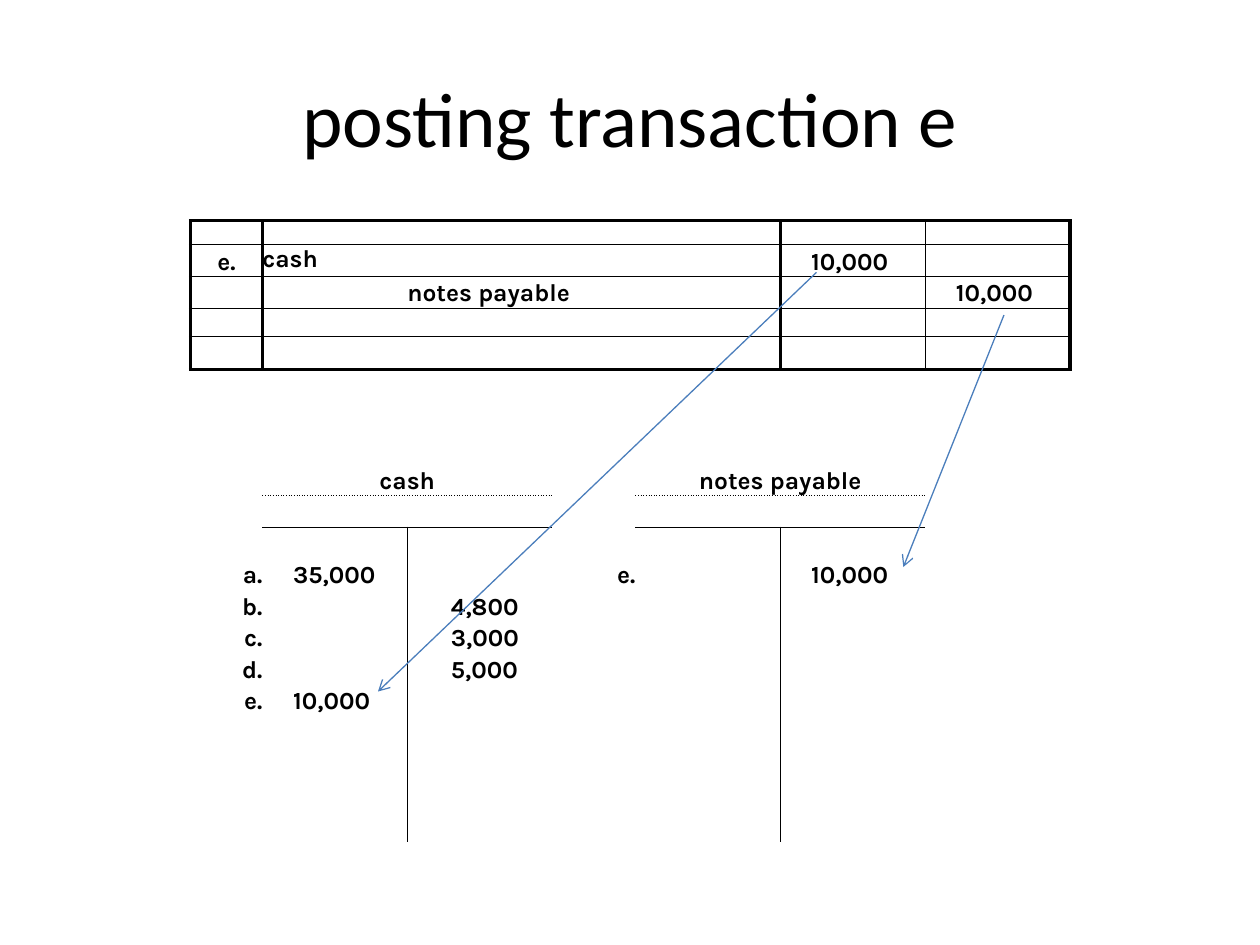
from lxml import etree
from pptx import Presentation
from pptx.dml.color import RGBColor
from pptx.enum.shapes import MSO_CONNECTOR
from pptx.enum.text import MSO_ANCHOR, PP_ALIGN
from pptx.oxml.ns import qn
from pptx.util import Cm, Pt

STRAIGHT = MSO_CONNECTOR.STRAIGHT
TOP, MIDDLE, BOTTOM = MSO_ANCHOR.TOP, MSO_ANCHOR.MIDDLE, MSO_ANCHOR.BOTTOM
LEFT, CENTER, RIGHT = PP_ALIGN.LEFT, PP_ALIGN.CENTER, PP_ALIGN.RIGHT
COLORS = {"ink": "000000", "arrow": "4B7EBC"}

THICK, THIN, DOTTED = (2, "solid"), (0.5, "solid"), (0.5, "dot")
JOURNAL_ROWS = 5
ACCOUNT_TITLE_ROW = 8
ACCOUNT_COLUMNS = (1, 2, 4, 5)
COLUMN_WIDTHS = [1.45, 2.92, 2.92, 1.68, 2.92, 2.92, 2.92]
ROW_HEIGHTS = [0.48, 0.64, 0.64, 0.58, 0.66] + [0.635] * 15
MERGES = [(2, 2, 3), (ACCOUNT_TITLE_ROW, 1, 2), (ACCOUNT_TITLE_ROW, 4, 5)]
AMOUNT_INDENT, SMALL_AMOUNT_INDENT = 0.62, 0.88

# (row, column): text, alignment, anchor, left indent in cm
ENTRIES = {
    (1, 0): ("e.", CENTER, BOTTOM, 0),
    (1, 1): ("cash", LEFT, TOP, 0),
    (1, 5): ("10,000", LEFT, BOTTOM, AMOUNT_INDENT),
    (2, 2): ("notes payable", LEFT, BOTTOM, 0),
    (2, 6): ("10,000", LEFT, BOTTOM, AMOUNT_INDENT),
    (8, 1): ("cash", CENTER, BOTTOM, 0),
    (8, 4): ("notes payable", CENTER, BOTTOM, 0),
    (11, 1): ("35,000", LEFT, BOTTOM, AMOUNT_INDENT),
    (11, 3): ("e.", RIGHT, BOTTOM, 0),
    (11, 5): ("10,000", LEFT, BOTTOM, AMOUNT_INDENT),
    (15, 1): ("10,000", LEFT, BOTTOM, AMOUNT_INDENT),
}
for row, letter in enumerate("abcde", start=11):
    ENTRIES[row, 0] = (f"{letter}.", RIGHT, BOTTOM, 0)
for row, amount in enumerate(["4,800", "3,000", "5,000"], start=12):
    ENTRIES[row, 2] = (amount, LEFT, BOTTOM, SMALL_AMOUNT_INDENT)


def horizontal_rule(line, column):
    """Return the border on the given row line, or None."""
    if line in (0, JOURNAL_ROWS):
        return THICK
    if line < JOURNAL_ROWS:
        return THIN
    if column in ACCOUNT_COLUMNS:
        return {9: DOTTED, 10: THIN}.get(line)
    return None


def vertical_rule(line, row):
    """Return the border on the given column line, or None."""
    if row < JOURNAL_ROWS:
        return {0: THICK, 1: THICK, 5: THICK, 6: THIN, 7: THICK}.get(line)
    if row >= 10 and line in (2, 5):
        return THIN
    return None


class SlideBuilder:
    title_font, table_font = "Calibri", "Karla"
    title_size, table_size, empty_size = 44, 14, 9

    def __init__(self, slide):
        self.slide = slide

    def add_run(self, paragraph, text, font, size, bold=False):
        run = paragraph.add_run()
        run.text = text
        run.font.name = font
        run.font.size = Pt(size)
        run.font.bold = bold
        run.font.color.rgb = RGBColor.from_string(COLORS["ink"])

    def title(self, text, left, top, width, height):
        frame = self.slide.shapes.add_textbox(
            Cm(left), Cm(top), Cm(width), Cm(height)).text_frame
        frame.word_wrap = True
        frame.vertical_anchor = MIDDLE
        paragraph = frame.paragraphs[0]
        paragraph.alignment = CENTER
        self.add_run(paragraph, text, self.title_font, self.title_size)

    def border(self, cell, side, rule):
        properties = cell._tc.get_or_add_tcPr()
        line = etree.SubElement(properties, qn(f"a:ln{side}"))
        if rule is None:
            line.set("w", "0")
            etree.SubElement(line, qn("a:noFill"))
            return
        width, dash = rule
        line.set("w", str(Pt(width)))
        fill = etree.SubElement(line, qn("a:solidFill"))
        etree.SubElement(fill, qn("a:srgbClr"), val=COLORS["ink"])
        etree.SubElement(line, qn("a:prstDash"), val=dash)

    def fill_cell(self, cell, entry):
        cell.margin_left = cell.margin_right = 0
        cell.margin_top = cell.margin_bottom = 0
        paragraph = cell.text_frame.paragraphs[0]
        if entry is None:
            # A small end mark keeps an empty row from growing
            etree.SubElement(paragraph._p, qn("a:endParaRPr"),
                             sz=str(self.empty_size * 100))
            return
        text, alignment, anchor, indent = entry
        cell.margin_left = Cm(indent)
        cell.vertical_anchor = anchor
        paragraph.alignment = alignment
        self.add_run(paragraph, text, self.table_font, self.table_size, True)

    def ledger(self, left, top):
        table = self.slide.shapes.add_table(
            len(ROW_HEIGHTS), len(COLUMN_WIDTHS), Cm(left), Cm(top),
            Cm(sum(COLUMN_WIDTHS)), Cm(sum(ROW_HEIGHTS))).table
        table.first_row = table.horz_banding = False
        for column, width in zip(table.columns, COLUMN_WIDTHS):
            column.width = Cm(width)
        for row, height in zip(table.rows, ROW_HEIGHTS):
            row.height = Cm(height)
        for row in range(len(ROW_HEIGHTS)):
            for column in range(len(COLUMN_WIDTHS)):
                cell = table.cell(row, column)
                self.fill_cell(cell, ENTRIES.get((row, column)))
                self.border(cell, "L", vertical_rule(column, row))
                self.border(cell, "R", vertical_rule(column + 1, row))
                self.border(cell, "T", horizontal_rule(row, column))
                self.border(cell, "B", horizontal_rule(row + 1, column))
                cell.fill.background()
        for row, first, last in MERGES:
            table.cell(row, first).merge(table.cell(row, last))

    def arrow(self, start, end):
        connector = self.slide.shapes.add_connector(
            STRAIGHT, *(Cm(value) for value in (*start, *end)))
        connector.line.color.rgb = RGBColor.from_string(COLORS["arrow"])
        connector.line.width = Pt(0.75)
        etree.SubElement(connector.line._get_or_add_ln(), qn("a:tailEnd"),
                         type="arrow")
        etree.SubElement(connector._element.spPr, qn("a:effectLst"))


def main():
    presentation = Presentation()
    presentation.slide_width, presentation.slide_height = Cm(25.4), Cm(19.05)
    slide = presentation.slides.add_slide(presentation.slide_layouts[6])
    builder = SlideBuilder(slide)
    builder.title("posting transaction e", 1.27, 0.76, 22.86, 3.18)
    builder.ledger(3.84, 4.45)
    builder.arrow((16.46, 5.49), (7.62, 13.94))
    builder.arrow((20.24, 6.35), (18.21, 11.43))
    presentation.save("out.pptx")


if __name__ == "__main__":
    main()
